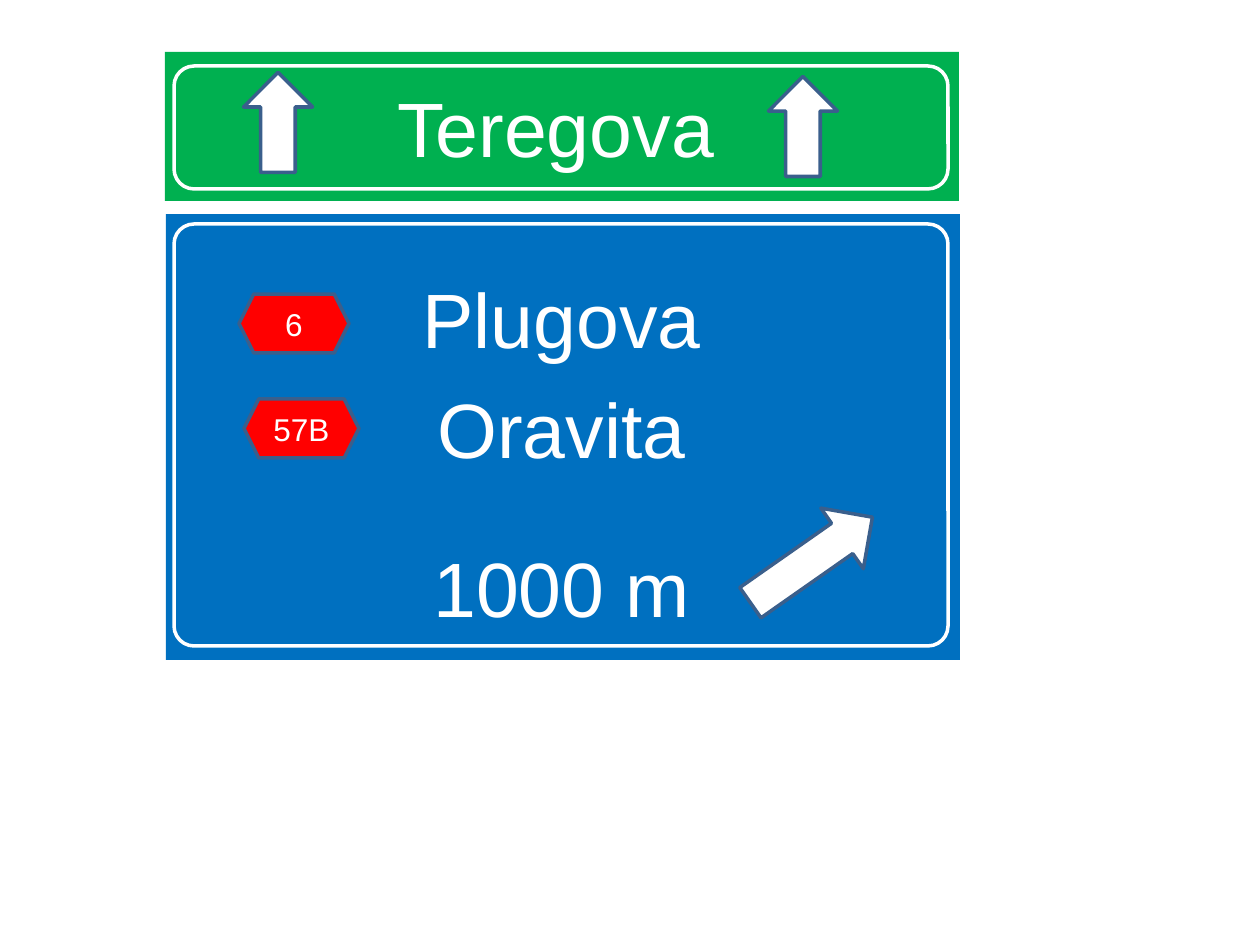
from dataclasses import dataclass

from pptx import Presentation
from pptx.dml.color import RGBColor
from pptx.enum.shapes import MSO_SHAPE
from pptx.enum.text import MSO_ANCHOR, PP_ALIGN
from pptx.util import Emu, Pt

PX = 914400 // 126
RECTANGLE = MSO_SHAPE.RECTANGLE
ROUNDED = MSO_SHAPE.ROUNDED_RECTANGLE
ARROW = MSO_SHAPE.RIGHT_ARROW
HEXAGON = MSO_SHAPE.HEXAGON
TOP, MIDDLE = MSO_ANCHOR.TOP, MSO_ANCHOR.MIDDLE
CENTER = PP_ALIGN.CENTER
COLORS = {
    "green": "00B050",
    "blue": "0070C0",
    "red": "FF0000",
    "white": "FFFFFF",
    "outline": "3A5F8C",
}


@dataclass(frozen=True)
class Box:
    left: int
    top: int
    width: int
    height: int


@dataclass(frozen=True)
class Line:
    text: str
    space_before: int = 0


@dataclass(frozen=True)
class Panel:
    box: Box
    color: str
    lines: tuple[Line, ...]
    anchor: MSO_ANCHOR
    left_inset: int
    top_inset: int


@dataclass(frozen=True)
class Border:
    box: Box
    radius: int = 20


@dataclass(frozen=True)
class Arrow:
    box: Box
    rotation: int


@dataclass(frozen=True)
class RoadBadge:
    box: Box
    number: str


PANELS = (
    Panel(Box(165, 52, 794, 149), "green", (Line("Teregova"),), MIDDLE, 0, 6),
    Panel(
        Box(166, 214, 794, 446),
        "blue",
        (Line("Plugova"), Line("Oravita", 10), Line("1000 m", 38)),
        TOP, 10, 58,
    ),
)
ARROWS = (
    Arrow(Box(753, 92, 100, 69), 270),
    Arrow(Box(228, 88, 100, 69), 270),
    Arrow(Box(737, 523, 149, 74), 325),
)
BORDERS = (Border(Box(174, 66, 774, 123)), Border(Box(174, 224, 774, 422)))
BADGES = (
    RoadBadge(Box(239, 294, 110, 59), "6"),
    RoadBadge(Box(244, 399, 115, 59), "57B"),
)


def px(length: int) -> Emu:
    return Emu(length * PX)


def rgb(name: str) -> RGBColor:
    return RGBColor.from_string(COLORS[name])


def add_shape(slide, kind: MSO_SHAPE, box: Box, fill: str | None, line: str | None):
    """Draw a shadowless preset shape; None leaves out the fill or the line."""
    shape = slide.shapes.add_shape(
        kind, px(box.left), px(box.top), px(box.width), px(box.height)
    )
    shape.shadow.inherit = False
    if fill:
        shape.fill.solid()
        shape.fill.fore_color.rgb = rgb(fill)
    else:
        shape.fill.background()
    if line:
        shape.line.color.rgb = rgb(line)
        shape.line.width = Pt(2)
    else:
        shape.line.fill.background()
    return shape


def write_lines(frame, lines: tuple[Line, ...], size: int) -> None:
    frame.text = "\n".join(line.text for line in lines)
    for paragraph, line in zip(frame.paragraphs, lines):
        paragraph.alignment = CENTER
        paragraph.space_before = Pt(line.space_before)
        font = paragraph.runs[0].font
        font.name = "Arial"
        font.size = Pt(size)
        font.color.rgb = rgb("white")


def draw_panel(slide, panel: Panel) -> None:
    frame = add_shape(slide, RECTANGLE, panel.box, panel.color, None).text_frame
    frame.word_wrap = True
    frame.vertical_anchor = panel.anchor
    frame.margin_left = px(panel.left_inset)
    frame.margin_top = px(panel.top_inset)
    write_lines(frame, panel.lines, 44)


def draw_arrow(slide, arrow: Arrow) -> None:
    add_shape(slide, ARROW, arrow.box, "white", "outline").rotation = arrow.rotation


def draw_border(slide, border: Border) -> None:
    outline = add_shape(slide, ROUNDED, border.box, None, "white")
    outline.adjustments[0] = border.radius / border.box.height


def draw_badge(slide, badge: RoadBadge) -> None:
    frame = add_shape(slide, HEXAGON, badge.box, "red", "outline").text_frame
    frame.word_wrap = False
    frame.vertical_anchor = MIDDLE
    write_lines(frame, (Line(badge.number),), 18)


def main() -> None:
    deck = Presentation()
    deck.slide_width, deck.slide_height = px(1260), px(945)
    slide = deck.slides.add_slide(deck.slide_layouts[6])
    for panel in PANELS:
        draw_panel(slide, panel)
    for arrow in ARROWS:
        draw_arrow(slide, arrow)
    for border in BORDERS:
        draw_border(slide, border)
    for badge in BADGES:
        draw_badge(slide, badge)
    deck.save("out.pptx")


if __name__ == "__main__":
    main()
